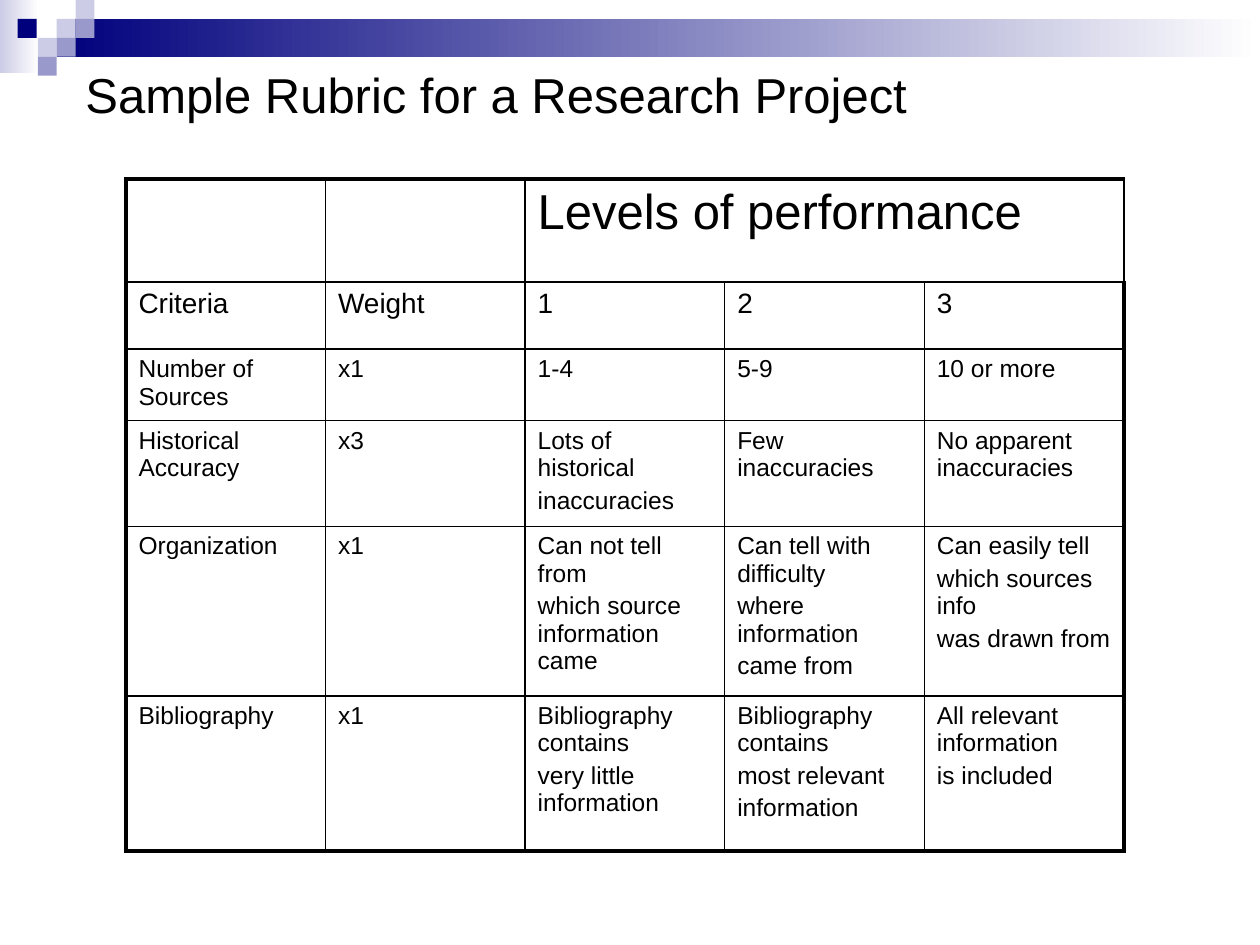
from lxml import etree
from pptx import Presentation
from pptx.dml.color import RGBColor
from pptx.enum.shapes import MSO_SHAPE as Shape
from pptx.oxml.ns import qn
from pptx.util import Inches, Pt

BLACK, WHITE = "000000", "FFFFFF"
NAVY, LAVENDER, PERIWINKLE = "00007D", "CCCCE6", "9999CC"
THIN, THICK = 1, 2.25

# Each inner list is a row; line breaks separate paragraphs
RUBRIC = [
    ["", "", "Levels of performance", "", ""],
    ["Criteria", "Weight", "1", "2", "3"],
    ["Number of Sources", "x1", "1-4", "5-9", "10 or more"],
    ["Historical Accuracy", "x3", "Lots of historical\ninaccuracies",
     "Few inaccuracies", "No apparent inaccuracies"],
    ["Organization", "x1",
     "Can not tell from\nwhich source information came",
     "Can tell with difficulty\nwhere information\ncame from",
     "Can easily tell\nwhich sources info\nwas drawn from"],
    ["Bibliography", "x1",
     "Bibliography contains\nvery little information",
     "Bibliography contains\nmost relevant\ninformation",
     "All relevant information\nis included"],
]
ROW_HEIGHTS = [0.82, 0.53, 0.53, 0.8, 1.27, 1.23]
ROW_SIZES = [28, 16, 14, 14, 14, 14]


def color(hex_string):
    return RGBColor.from_string(hex_string)


class SlideBuilder:
    font = "Arial"

    def __init__(self, slide):
        self.slide = slide

    def rectangle(self, left, top, width, height, start, end=None):
        shape = self.slide.shapes.add_shape(
            Shape.RECTANGLE, Inches(left), Inches(top), Inches(width), Inches(height))
        shape.shadow.inherit = False
        shape.line.fill.background()
        if end:
            shape.fill.gradient()
            shape.fill.gradient_angle = 0
            for stop, shade in zip(shape.fill.gradient_stops, (start, end)):
                stop.color.rgb = color(shade)
        else:
            shape.fill.solid()
            shape.fill.fore_color.rgb = color(start)

    def set_text(self, text_frame, text, size):
        text_frame.text = text
        for index, paragraph in enumerate(text_frame.paragraphs):
            paragraph.space_before = Pt(0.2 * size if index else 0)
            paragraph.font.size = Pt(size)
            for run in paragraph.runs:
                run.font.name = self.font
                run.font.size = Pt(size)
                run.font.color.rgb = color(BLACK)

    def text(self, left, top, width, height, text, size):
        box = self.slide.shapes.add_textbox(
            Inches(left), Inches(top), Inches(width), Inches(height))
        box.text_frame.word_wrap = True
        box.text_frame.margin_top = Inches(0.09)
        self.set_text(box.text_frame, text, size)

    def border(self, cell, side, width):
        line = etree.SubElement(cell._tc.get_or_add_tcPr(), qn(f"a:ln{side}"),
                                w=str(Pt(width)))
        fill = etree.SubElement(line, qn("a:solidFill"))
        etree.SubElement(fill, qn("a:srgbClr"), val=BLACK)

    def table(self, left, top, width, rows, heights, sizes):
        last_row, last_column = len(rows) - 1, len(rows[0]) - 1
        table = self.slide.shapes.add_table(
            len(rows), len(rows[0]), Inches(left), Inches(top),
            Inches(width), Inches(sum(heights))).table
        table.first_row = table.horz_banding = False
        for column in table.columns:
            column.width = Inches(width / len(rows[0]))
        for r, (row, height, size) in enumerate(zip(rows, heights, sizes)):
            table.rows[r].height = Inches(height)
            for c, text in enumerate(row):
                cell = table.cell(r, c)
                self.set_text(cell.text_frame, text, size)
                # Thick frame outside, thin lines inside
                outer = {"L": c == 0, "R": c == last_column,
                         "T": r == 0, "B": r == last_row}
                for side, on_frame in outer.items():
                    self.border(cell, side, THICK if on_frame else THIN)
                cell.fill.background()
        return table


def main():
    presentation = Presentation()
    presentation.slide_width, presentation.slide_height = Inches(10), Inches(7.5)
    builder = SlideBuilder(presentation.slides.add_slide(presentation.slide_layouts[6]))

    # Header band and squares
    builder.rectangle(0, 0, 0.31, 0.58, LAVENDER, WHITE)
    builder.rectangle(0.45, 0.15, 9.55, 0.3, NAVY, WHITE)
    unit = 0.15
    for left, top, shade in [
        (0.45, 0.15, LAVENDER), (0.6, 0, LAVENDER), (0.6, 0.15, PERIWINKLE),
        (0.3, 0.3, LAVENDER), (0.14, 0.15, NAVY), (0.45, 0.3, PERIWINKLE),
        (0.3, 0.45, PERIWINKLE),
    ]:
        builder.rectangle(left, top, unit, unit, shade)

    # Title
    builder.text(0.58, 0.42, 9, 0.83, "Sample Rubric for a Research Project", 28)

    # Rubric with a heading across the three levels
    table = builder.table(1, 1.42, 7.92, RUBRIC, ROW_HEIGHTS, ROW_SIZES)
    table.cell(0, 2).merge(table.cell(0, 4))

    presentation.save("out.pptx")


if __name__ == "__main__":
    main()
